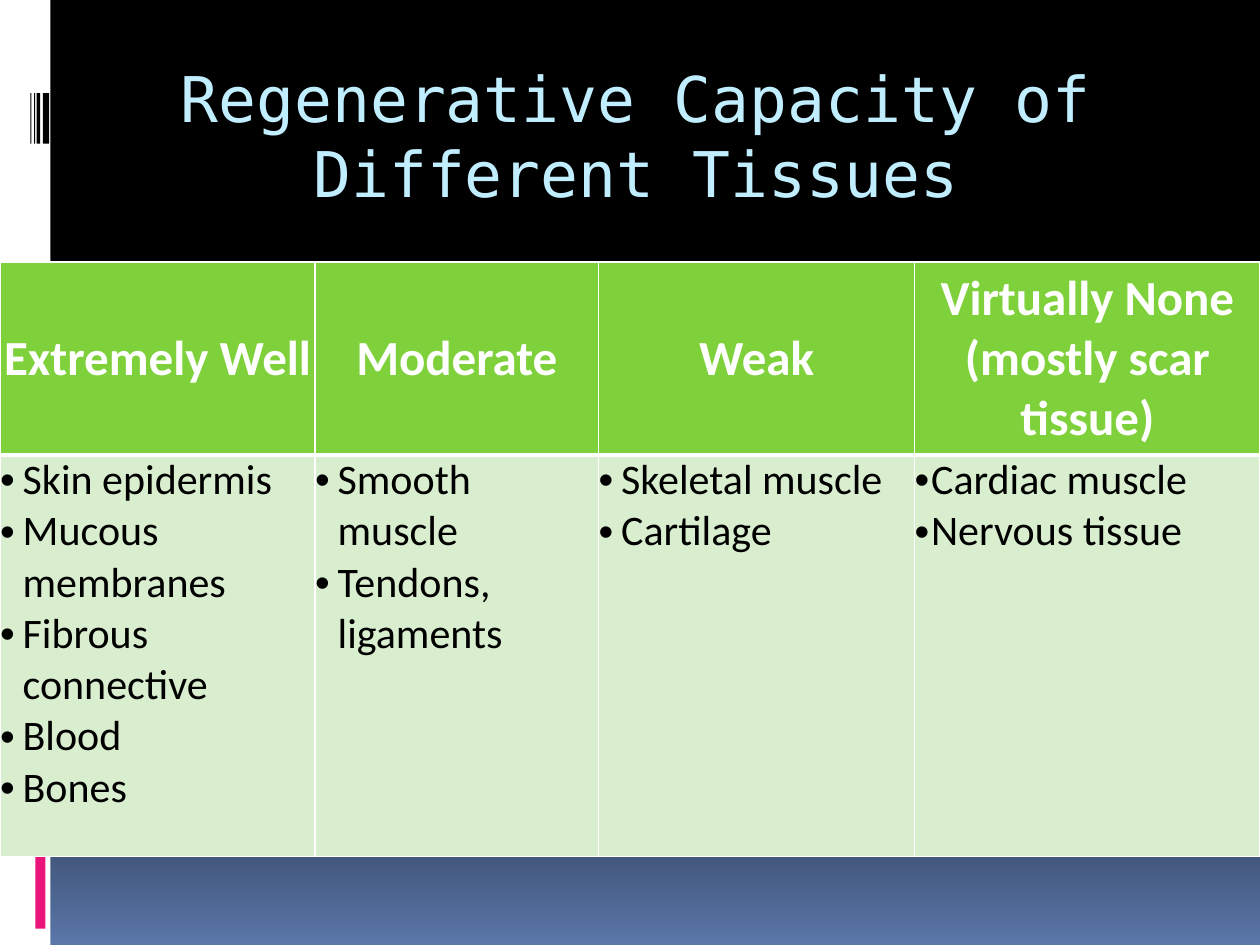
from lxml import etree
from pptx import Presentation
from pptx import util as u
from pptx.dml.color import RGBColor
from pptx.enum import shapes, text
from pptx.oxml.ns import qn

WHITE = RGBColor(0xFF, 0xFF, 0xFF)
BLACK = RGBColor(0x00, 0x00, 0x00)
NIGHT_BLUE = RGBColor(0x5A, 0x77, 0xA9)
PALE_BLUE = RGBColor(0xC1, 0xEE, 0xFF)
PINK = RGBColor(0xEA, 0x15, 0x7A)
AMBER = RGBColor(0xFE, 0xB8, 0x0A)
SLATE = RGBColor(0x4E, 0x5B, 0x6F)
GREEN = RGBColor(0x7F, 0xD1, 0x3B)
PALE_GREEN = RGBColor(0xD8, 0xEE, 0xCE)

TITLE_FONT = dict(name="DejaVu Sans Mono", size=u.Pt(36), bold=False)
HEADER_FONT = dict(name="Calibri", size=u.Pt(28), bold=True)
BODY_FONT = dict(name="Calibri", size=u.Pt(24), bold=False)

GRID_COLUMNS, GRID_ROWS = 100, 75

# Left, top, width, height in grid units, then colour
SIDE_BARS = [
    (0, 0, 4, 75, WHITE),
    (2.8, 55.2, 0.8, 18.5, PINK),
    (2.8, 52.5, 0.8, 2.5, AMBER),
    (2.8, 50.7, 0.8, 1.5, SLATE),
    (2.8, 49.7, 0.8, 0.8, PINK),
]
BARCODE = [(3.4, 0.5), (2.9, 0.3), (2.7, 0.1), (2.4, 0.1)]

# Column width, bullet indent, header lines, list of tissues
TISSUES = [
    (25, 1.8, ["Extremely Well"],
     ["Skin epidermis", "Mucous membranes", "Fibrous connective", "Blood", "Bones"]),
    (22.5, 1.8, ["Moderate"], ["Smooth muscle", "Tendons, ligaments"]),
    (25.1, 1.8, ["Weak"], ["Skeletal muscle", "Cartilage"]),
    (27.4, 1.3, ["Virtually None", "(mostly scar tissue)"],
     ["Cardiac muscle", "Nervous tissue"]),
]
ROW_HEIGHTS = (15.3, 31.9)


class SlideBuilder:
    """Holds the current slide and its grid."""

    def __init__(self, presentation):
        self.width = presentation.slide_width
        self.height = presentation.slide_height
        self.slide = presentation.slides.add_slide(presentation.slide_layouts[5])

    def x(self, columns):
        return u.Emu(round(self.width * columns / GRID_COLUMNS))

    def y(self, rows):
        return u.Emu(round(self.height * rows / GRID_ROWS))

    def box(self, left, top, width, height):
        return self.x(left), self.y(top), self.x(width), self.y(height)

    def background(self):
        fill = self.slide.background.fill
        fill.gradient()
        fill.gradient_angle = 270
        stops = [(0.65, BLACK), (1, NIGHT_BLUE)]
        for stop, (position, color) in zip(fill.gradient_stops, stops):
            stop.position = position
            stop.color.rgb = color

    def bar(self, left, top, width, height, color):
        shape = self.slide.shapes.add_shape(
            shapes.MSO_SHAPE.RECTANGLE, *self.box(left, top, width, height))
        shape.shadow.inherit = False
        shape.fill.solid()
        shape.fill.fore_color.rgb = color
        shape.line.fill.background()

    def title(self, words, left, top, width, height):
        title = self.slide.shapes.title
        title.left, title.top, title.width, title.height = self.box(
            left, top, width, height)
        frame = title.text_frame
        frame.word_wrap = True
        frame.auto_size = text.MSO_AUTO_SIZE.NONE
        frame.vertical_anchor = text.MSO_ANCHOR.TOP
        self.paragraphs(frame, [words], TITLE_FONT, PALE_BLUE, text.PP_ALIGN.CENTER)

    def paragraphs(self, frame, lines, font, color, alignment):
        frame.text = "\n".join(lines)
        for paragraph in frame.paragraphs:
            paragraph.alignment = alignment
            for run in paragraph.runs:
                for name, value in font.items():
                    setattr(run.font, name, value)
                run.font.color.rgb = color

    def bullets(self, frame, indent):
        for paragraph in frame.paragraphs:
            properties = paragraph._p.get_or_add_pPr()
            properties.set("marL", str(self.x(indent)))
            properties.set("indent", str(-self.x(indent)))
            color = etree.SubElement(properties, qn("a:buClr"))
            etree.SubElement(color, qn("a:srgbClr"), val=str(BLACK))
            etree.SubElement(properties, qn("a:buFont"), typeface="Arial")
            etree.SubElement(properties, qn("a:buChar"), char="•")

    def borders(self, cell, **widths):
        """Draw white borders; sides L, R, T, B give their width in points."""
        properties = cell._tc.get_or_add_tcPr()
        for side, width in widths.items():
            line = etree.SubElement(
                properties, qn(f"a:ln{side}"), w=str(u.Pt(width)))
            fill = etree.SubElement(line, qn("a:solidFill"))
            etree.SubElement(fill, qn("a:srgbClr"), val=str(WHITE))

    def cell(self, cell, color, anchor, top_border, bottom_border):
        self.borders(cell, L=1, R=1, T=top_border, B=bottom_border)
        cell.fill.solid()
        cell.fill.fore_color.rgb = color
        cell.vertical_anchor = anchor
        for side in ("left", "right", "top", "bottom"):
            setattr(cell, f"margin_{side}", 0)

    def table(self, columns, left, top):
        width = sum(column[0] for column in columns)
        table = self.slide.shapes.add_table(
            len(ROW_HEIGHTS), len(columns),
            *self.box(left, top, width, sum(ROW_HEIGHTS))).table
        table.first_row = table.horz_banding = False
        for row, height in zip(table.rows, ROW_HEIGHTS):
            row.height = self.y(height)
        for index, (width, indent, heading, tissues) in enumerate(columns):
            table.columns[index].width = self.x(width)
            header, body = table.cell(0, index), table.cell(1, index)
            self.cell(header, GREEN, text.MSO_ANCHOR.MIDDLE, 1, 3)
            self.paragraphs(header.text_frame, heading, HEADER_FONT, WHITE,
                            text.PP_ALIGN.CENTER)
            self.cell(body, PALE_GREEN, text.MSO_ANCHOR.TOP, 3, 1)
            self.paragraphs(body.text_frame, tissues, BODY_FONT, BLACK,
                            text.PP_ALIGN.LEFT)
            self.bullets(body.text_frame, indent)


def main():
    presentation = Presentation()
    presentation.slide_width = u.Inches(10)
    presentation.slide_height = u.Inches(7.5)
    builder = SlideBuilder(presentation)
    builder.background()
    for bar in SIDE_BARS:
        builder.bar(*bar)
    for left, width in BARCODE:
        builder.bar(left, 7.4, width, 4, BLACK)
    builder.title("Regenerative Capacity of Different Tissues", 4.2, 4.2, 92.5, 11.4)
    builder.table(TISSUES, 0, 20.8)
    presentation.save("out.pptx")


if __name__ == "__main__":
    main()
